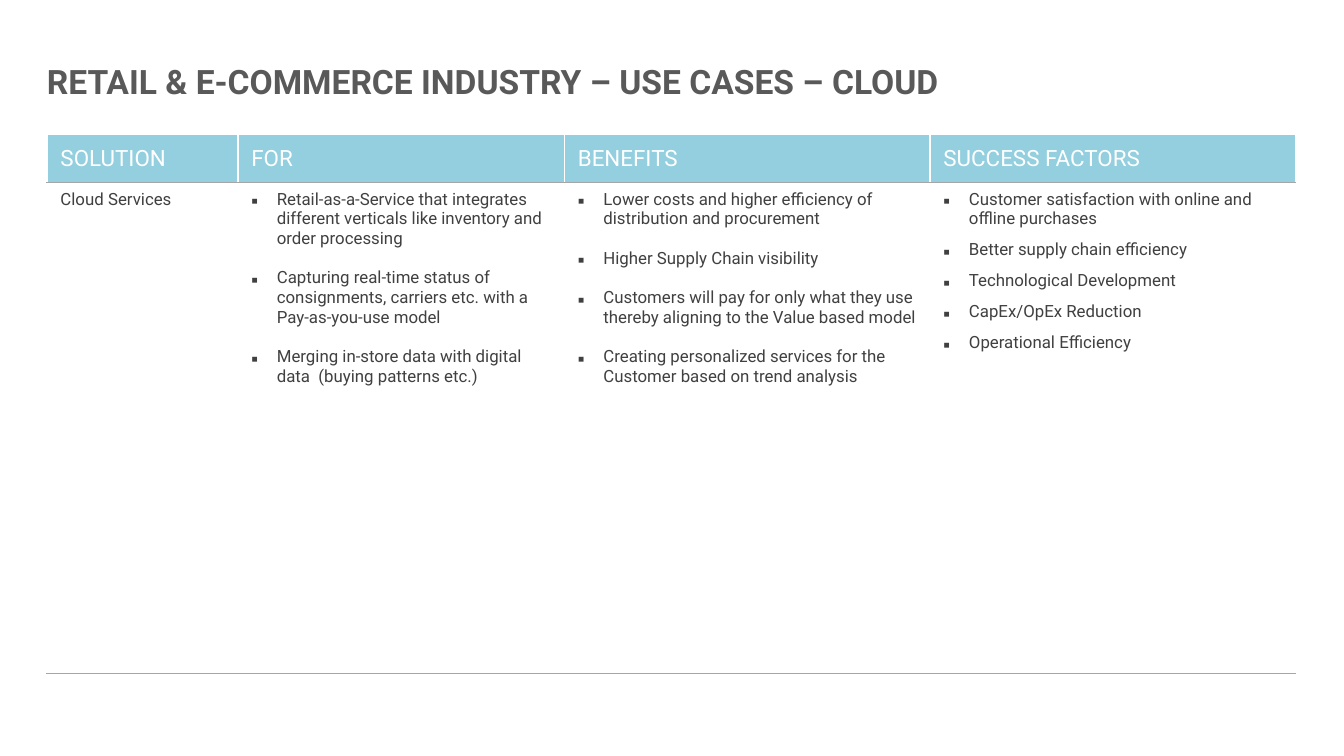
from dataclasses import dataclass

from lxml import etree
from pptx import Presentation
from pptx.dml.color import RGBColor
from pptx.enum.text import MSO_ANCHOR
from pptx.oxml.ns import qn
from pptx.util import Inches, Pt

MIDDLE = MSO_ANCHOR.MIDDLE
TOP = MSO_ANCHOR.TOP
FONT = "Roboto"
COLORS = {
    "title": "595959",
    "head": "93CFDE",
    "body": "404040",
    "rule": "A6A6A6",
    "white": "FFFFFF",
}
LEFT = 0.35
INDENT = 0.19
HEIGHTS = (0.36, 3.65)


@dataclass(frozen=True)
class Column:
    head: str
    width: float
    items: tuple[str, ...]
    gap: float = 0
    bullet: bool = True


COLUMNS = (
    Column("SOLUTION", 1.42, ("Cloud Services",), bullet=False),
    Column("FOR", 2.43, (
        "Retail-as-a-Service that integrates different verticals like "
        "inventory and order processing",
        "Capturing real-time status of consignments, carriers etc. with a "
        "Pay-as-you-use model",
        "Merging in-store data with digital data  (buying patterns etc.)",
    ), 10.5),
    Column("BENEFITS", 2.72, (
        "Lower costs and higher efficiency of distribution and procurement",
        "Higher Supply Chain visibility",
        "Customers will pay for only what they use thereby aligning to the "
        "Value based model",
        "Creating personalized services for the Customer based on trend "
        "analysis",
    ), 10.5),
    Column("SUCCESS FACTORS", 2.72, (
        "Customer satisfaction with online and offline purchases",
        "Better supply chain efficiency",
        "Technological Development",
        "CapEx/OpEx Reduction",
        "Operational Efficiency",
    ), 6),
)


def rgb(name: str) -> RGBColor:
    return RGBColor.from_string(COLORS[name])


def set_font(para, size: float, color: str, bold: bool = False) -> None:
    font = para.font
    font.name, font.size, font.bold = FONT, Pt(size), bold
    font.color.rgb = rgb(color)


def add_bullet(para) -> None:
    props = para._p.get_or_add_pPr()
    props.set("marL", str(Inches(INDENT)))
    props.set("indent", str(-Inches(INDENT)))
    etree.SubElement(props, qn("a:buFont")).set("typeface", "Noto Sans Symbols")
    etree.SubElement(props, qn("a:buChar")).set("char", "▪")


def add_border(cell, side: str, color: str, width: float) -> None:
    line = etree.SubElement(cell._tc.get_or_add_tcPr(), qn(f"a:ln{side}"))
    line.set("w", str(Pt(width)))
    fill = etree.SubElement(line, qn("a:solidFill"))
    etree.SubElement(fill, qn("a:srgbClr")).set("val", COLORS[color])


def style_cell(cell, fill: str, top: tuple[str, float]) -> None:
    """Set borders, then fill, in the order the file format asks for."""
    edge, rule = ("white", 1), ("rule", 0.5)
    for side, (color, width) in zip("LRTB", (edge, edge, top, rule)):
        add_border(cell, side, color, width)
    cell.fill.solid()
    cell.fill.fore_color.rgb = rgb(fill)


def fill_head(cell, text: str) -> None:
    style_cell(cell, "head", ("white", 1))
    cell.vertical_anchor = MIDDLE
    cell.text = text
    set_font(cell.text_frame.paragraphs[0], 12, "white")


def fill_body(cell, column: Column) -> None:
    style_cell(cell, "white", ("rule", 0.5))
    cell.vertical_anchor = TOP
    frame = cell.text_frame
    for index, item in enumerate(column.items):
        para = frame.add_paragraph() if index else frame.paragraphs[0]
        para.text = item
        if column.bullet:
            add_bullet(para)
        if index:
            para.space_before = Pt(column.gap)
        set_font(para, 9, "body")


def add_title(slide, text: str) -> None:
    box = slide.shapes.add_textbox(
        Inches(LEFT), Inches(0.4), Inches(8.24), Inches(0.4))
    frame = box.text_frame
    frame.word_wrap = True
    frame.vertical_anchor = MIDDLE
    frame.margin_left = 0
    frame.text = text
    set_font(frame.paragraphs[0], 18, "title", True)


def add_grid(slide) -> None:
    width = sum(column.width for column in COLUMNS)
    table = slide.shapes.add_table(
        len(HEIGHTS), len(COLUMNS), Inches(LEFT), Inches(1),
        Inches(width), Inches(sum(HEIGHTS))).table
    table.first_row = table.horz_banding = False
    for row, height in zip(table.rows, HEIGHTS):
        row.height = Inches(height)
    for index, column in enumerate(COLUMNS):
        table.columns[index].width = Inches(column.width)
        fill_head(table.cell(0, index), column.head)
        fill_body(table.cell(1, index), column)


def main() -> None:
    deck = Presentation()
    deck.slide_width = Inches(10)
    deck.slide_height = deck.slide_width * 9 // 16
    slide = deck.slides.add_slide(deck.slide_layouts[6])
    add_title(slide, "RETAIL & E-COMMERCE INDUSTRY – USE CASES – CLOUD")
    add_grid(slide)
    deck.save("out.pptx")


if __name__ == "__main__":
    main()
